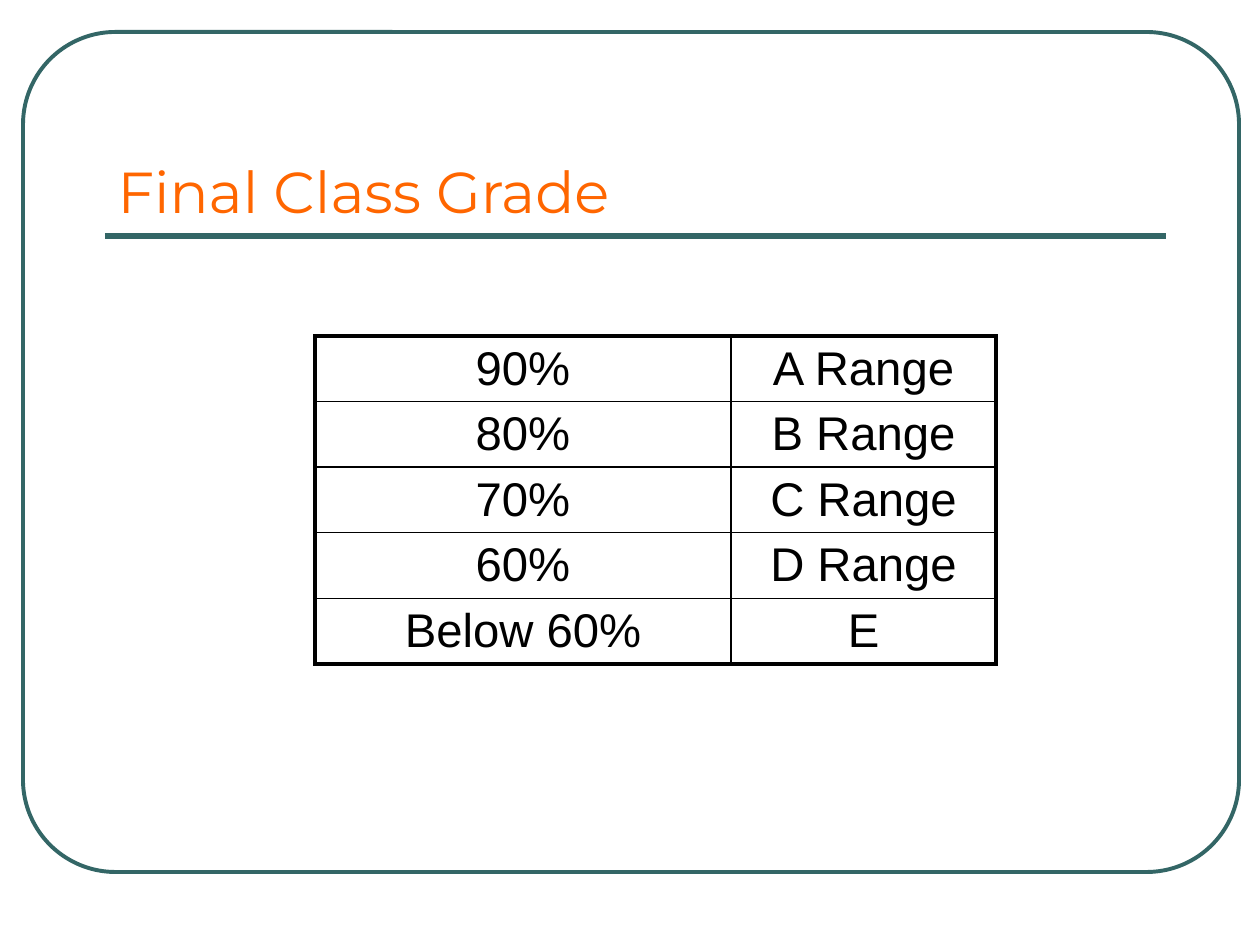
import pptx
import pptx.dml.color
import pptx.enum.shapes
import pptx.enum.text
import pptx.oxml
import pptx.oxml.ns
import pptx.util

PX = 914400 / 126
TEAL, ORANGE, BLACK = "336666", "FF6600", "000000"
THICK, THIN = 2.25, 1


def px(length):
    return pptx.util.Emu(round(length * PX))


def color(value):
    return pptx.dml.color.RGBColor.from_string(value)


class GradeSlide:
    def __init__(self, deck):
        self.slide = deck.slides.add_slide(deck.slide_layouts[5])
        self.shapes = self.slide.shapes

    def stroke(self, line, hex_color, width):
        line.color.rgb = color(hex_color)
        line.width = pptx.util.Pt(width)

    def frame(self, left, top, width, height, rounding):
        border = self.shapes.add_shape(
            pptx.enum.shapes.MSO_SHAPE.ROUNDED_RECTANGLE,
            px(left), px(top), px(width), px(height))
        border.adjustments[0] = rounding
        border.shadow.inherit = False
        border.fill.background()
        self.stroke(border.line, TEAL, THICK)

    def rule(self, left, right, y):
        underline = self.shapes.add_connector(
            pptx.enum.shapes.MSO_CONNECTOR.STRAIGHT, px(left), px(y), px(right), px(y))
        self.stroke(underline.line, TEAL, 3)
        effects = pptx.oxml.parse_xml(f"<a:effectLst {pptx.oxml.ns.nsdecls('a')}/>")
        underline.element.spPr.append(effects)

    def add_words(self, paragraph, words, font, size, hex_color, align):
        paragraph.alignment = align
        run = paragraph.add_run()
        run.text = words
        run.font.name = font
        run.font.size = pptx.util.Pt(size)
        run.font.color.rgb = color(hex_color)

    def title(self, words, left, top, width, height):
        heading = self.shapes.title
        heading.left, heading.top = px(left), px(top)
        heading.width, heading.height = px(width), px(height)
        heading.text_frame.word_wrap = True
        heading.text_frame.vertical_anchor = pptx.enum.text.MSO_ANCHOR.BOTTOM
        self.add_words(heading.text_frame.paragraphs[0], words, "Montserrat", 33, ORANGE,
                       pptx.enum.text.PP_ALIGN.LEFT)
        self.shapes.element.append(heading.element)

    def edge(self, cell, side, width):
        properties = cell._tc.get_or_add_tcPr()
        properties.append(pptx.oxml.parse_xml(
            f'<a:{side} {pptx.oxml.ns.nsdecls("a")} w="{pptx.util.Pt(width)}">'
            f'<a:solidFill><a:srgbClr val="{BLACK}"/></a:solidFill></a:{side}>'))

    def table(self, rows, left, top, widths, height):
        grades = self.shapes.add_table(
            len(rows), len(widths), px(left), px(top), px(sum(widths)), px(height)).table
        grades.first_row = grades.horz_banding = False
        for column, width in zip(grades.columns, widths):
            column.width = px(width)
        last_row, last_column = len(rows) - 1, len(widths) - 1
        for r, row in enumerate(rows):
            grades.rows[r].height = px(height / len(rows))
            for c, words in enumerate(row):
                cell = grades.cell(r, c)
                cell.margin_top = cell.margin_bottom = px(5)
                cell.vertical_anchor = pptx.enum.text.MSO_ANCHOR.MIDDLE
                outer = {"lnL": c == 0, "lnR": c == last_column,
                         "lnT": r == 0, "lnB": r == last_row}
                for side, is_outer in outer.items():
                    self.edge(cell, side, THICK if is_outer else THIN)
                cell.fill.background()
                self.add_words(cell.text_frame.paragraphs[0], words, "Arial", 27, BLACK,
                               pptx.enum.text.PP_ALIGN.CENTER)


def main():
    deck = pptx.Presentation()
    deck.slide_width, deck.slide_height = px(1260), px(945)
    page = GradeSlide(deck)
    page.frame(23, 32, 1216, 840, 0.11)
    page.rule(105, 1166, 236)
    page.title("Final Class Grade", 105, 73, 1061, 158)
    page.table([("90%", "A Range"), ("80%", "B Range"), ("70%", "C Range"),
                ("60%", "D Range"), ("Below 60%", "E")],
               315, 336, (416, 265), 328)
    deck.save("out.pptx")


if __name__ == "__main__":
    main()
